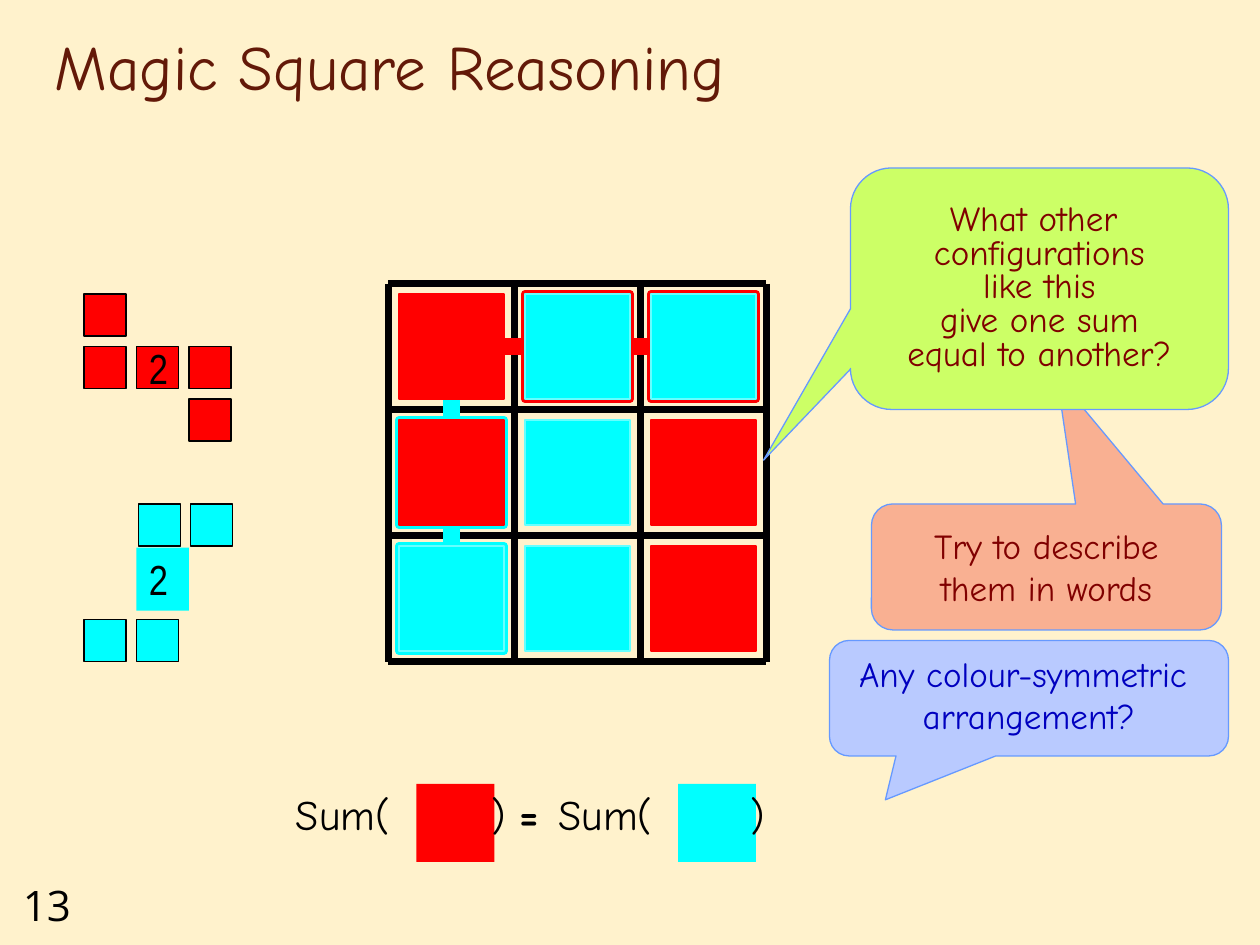
from lxml.etree import SubElement
from pptx import Presentation
from pptx.dml.color import RGBColor
from pptx.enum.shapes import MSO_CONNECTOR as CONN, MSO_SHAPE as SHAPE
from pptx.enum.text import MSO_ANCHOR as ANCHOR, PP_ALIGN as ALIGN
from pptx.oxml.ns import qn
from pptx.util import Pt

RED, CYAN, PALE_CYAN, BLACK = "FF0000", "00FFFF", "66FFFF", "000000"
COMIC = "Comic Neue"
FILLS = {"R": RED, "C": CYAN}
EDGES = {"R": RED, "C": PALE_CYAN}

SQUARE = ["RCC", "RCR", "CCR"]
GRID_X, GRID_Y, STEP, CELL = 222, 162, 72, 60
HALOS = [(1, 0, CYAN), (2, 0, CYAN), (0, 1, RED), (0, 2, RED)]
LINKS = [(234, 198, 426, 198, RED), (258, 174, 258, 360, CYAN)]

TILE = 24
TILES = [
    (RED, [(48, 168), (48, 198), (78, 198), (108, 198), (108, 228)]),
    (CYAN, [(79, 288), (109, 288), (48, 354), (78, 354)]),
]
SUM_SQUARES = [(238, 448, 44.5, 44.5, RED), (387.5, 448, 44.5, 44.5, CYAN)]
CENTRE = (78, 313, 30, 36, CYAN)

LABELS = [
    ("13", (6, 499, 54, 36), dict(size=24, name="Open Sans", color=BLACK)),
    ("Magic Square Reasoning", (24, 12, 612, 48), dict(size=36, name=COMIC, color="631908")),
    ("2", (78, 192, 30, 36), dict(size=24, name="Arial Narrow", color=BLACK)),
    ("2", (78, 313, 30, 36), dict(size=24, name="Arial Narrow", color=BLACK)),
]
SUM_FORMAT = dict(size=24, name=COMIC, color=BLACK)
SUM_PARTS = [("Sum(", 162, 100), (")", 274, 30), ("=", 290, 44), ("Sum(", 312, 100), (")", 422, 30)]
LABELS += [(text, (x, 447, w, 37), dict(SUM_FORMAT, bold=text == "=")) for text, x, w in SUM_PARTS]

CALLOUTS = [
    ("Try to describe\nthem in words", (498, 288, 200, 72), (0.03, -1.51, 0.17),
     "F9B092", "800000", 1, ANCHOR.MIDDLE),
    ("What other \nconfigurations\nlike this\ngive one sum\nequal to another?", (486, 96, 216, 138),
     (-0.73, 0.71, 0.17), "CCFF66", "800000", 0.8, ANCHOR.MIDDLE),
    ("Any colour-symmetric \narrangement?", (474, 366, 228, 66), (-0.36, 0.88, 0.17),
     "B9CAFF", "0000BF", 1, ANCHOR.TOP),
]


def rgb(value):
    return RGBColor.from_string(value)


def add_block(kind, box, fill, edge=None, weight=0.75):
    sp = s.shapes.add_shape(kind, *map(Pt, box))
    sp.shadow.inherit = False
    sp.fill.solid()
    sp.fill.fore_color.rgb = rgb(fill)
    if edge:
        sp.line.color.rgb = rgb(edge)
        sp.line.width = Pt(weight)
    else:
        sp.line.fill.background()
    return sp


def add_line(x1, y1, x2, y2, color, weight):
    line = s.shapes.add_connector(CONN.STRAIGHT, *map(Pt, (x1, y1, x2, y2)))
    line.line.color.rgb = rgb(color)
    line.line.width = Pt(weight)
    SubElement(line._element.spPr, qn("a:effectLst"))


def write(tf, text, size, color, **formats):
    p = tf.paragraphs[0]
    p.text = text
    for r in p.runs:
        r.font.size = Pt(size)
        r.font.color.rgb = rgb(color)
        for key, value in formats.items():
            setattr(r.font, key, value)
    return p


def cell_box(row, col):
    return GRID_X + 6 + col * STEP, GRID_Y + 6 + row * STEP, CELL, CELL


prs = Presentation()
prs.slide_width, prs.slide_height = Pt(720), Pt(540)
s = prs.slides.add_slide(prs.slide_layouts[6])
s.background.fill.solid()
s.background.fill.fore_color.rgb = rgb("FFF2CC")

side = 3 * STEP
for i in range(4):
    x, y = GRID_X + i * STEP, GRID_Y + i * STEP
    add_line(x, GRID_Y, x, GRID_Y + side, BLACK, 4.5)
    add_line(GRID_X, y, GRID_X + side, y, BLACK, 4.5)
for row, col, color in HALOS:
    add_block(SHAPE.RECTANGLE, cell_box(row, col), color, color, 4.5)
for *ends, color in LINKS:
    add_line(*ends, color, 10)
for row, marks in enumerate(SQUARE):
    for col, mark in enumerate(marks):
        add_block(SHAPE.RECTANGLE, cell_box(row, col), FILLS[mark], EDGES[mark])

for color, corners in TILES:
    for x, y in corners:
        add_block(SHAPE.RECTANGLE, (x, y, TILE, TILE), color, BLACK)
for *box, color in [*SUM_SQUARES, CENTRE]:
    add_block(SHAPE.RECTANGLE, box, color)

for text, box, formats in LABELS:
    tf = s.shapes.add_textbox(*map(Pt, box)).text_frame
    tf.word_wrap = True
    write(tf, text, **formats)

for text, box, adjustments, fill, color, spacing, anchor in CALLOUTS:
    sp = add_block(SHAPE.ROUNDED_RECTANGULAR_CALLOUT, box, fill, "6699FF")
    for i, value in enumerate(adjustments):
        sp.adjustments[i] = value
    tf = sp.text_frame
    tf.word_wrap = anchor == ANCHOR.TOP
    tf.vertical_anchor = anchor
    p = write(tf, text, 20, color, name=COMIC)
    p.alignment = ALIGN.CENTER
    p.line_spacing = spacing

prs.save("out.pptx")
